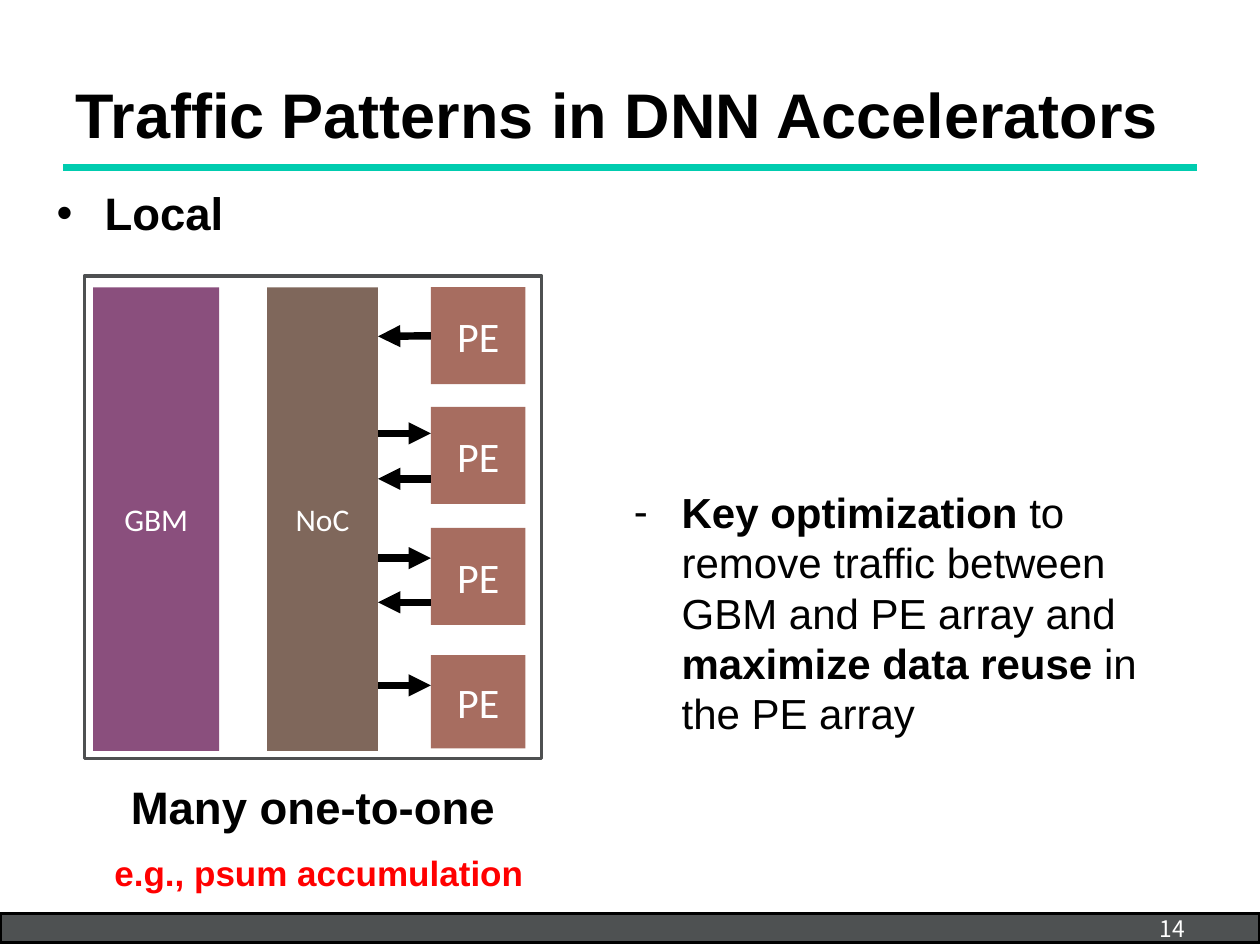
import pptx
import pptx.util
import pptx.dml.color
import pptx.enum.shapes
import pptx.enum.text
import pptx.oxml
import pptx.oxml.ns

Inches, Pt = pptx.util.Inches, pptx.util.Pt
RGBColor = pptx.dml.color.RGBColor
ALIGN = pptx.enum.text.PP_ALIGN
ANCHOR = pptx.enum.text.MSO_ANCHOR

BLACK = RGBColor(0x00, 0x00, 0x00)
WHITE = RGBColor(0xFF, 0xFF, 0xFF)
RED = RGBColor(0xFF, 0x00, 0x00)
TEAL = RGBColor(0x00, 0xCC, 0xAF)
FOOTER_GRAY = RGBColor(0x4E, 0x51, 0x52)
FRAME_GRAY = RGBColor(0x4E, 0x50, 0x51)
PURPLE = RGBColor(0x8A, 0x4F, 0x7D)
BROWN = RGBColor(0x7F, 0x67, 0x5B)
ROSE = RGBColor(0xA7, 0x6D, 0x60)


def add_xml(parent, tag, inner="", **attributes):
    """Append one DrawingML element to parent."""
    values = " ".join(f'{name}="{value}"' for name, value in attributes.items())
    namespace = pptx.oxml.ns.nsdecls("a")
    parent.append(pptx.oxml.parse_xml(f"<a:{tag} {namespace} {values}>{inner}</a:{tag}>"))


def write_text(shape, text, size=24, font="Arial", color=BLACK, bold=False,
               align=ALIGN.LEFT, anchor=ANCHOR.TOP, bullet=None, space_before=0):
    """Fill a shape with one paragraph; text is a string or (text, bold) pairs."""
    frame = shape.text_frame
    frame.word_wrap = True
    frame.auto_size = pptx.enum.text.MSO_AUTO_SIZE.NONE
    frame.vertical_anchor = anchor
    paragraph = frame.paragraphs[0]
    paragraph.alignment = align
    paragraph.space_before = Pt(space_before)
    for content, is_bold in [(text, bold)] if isinstance(text, str) else text:
        run = paragraph.add_run()
        run.text = content
        run.font.size = Pt(size)
        run.font.name = font
        run.font.bold = is_bold
        run.font.color.rgb = color
    if bullet:
        properties = paragraph._p.get_or_add_pPr()
        properties.set("marL", str(Inches(0.38)))
        properties.set("indent", str(-Inches(0.38)))
        add_xml(properties, "buClr", f'<a:srgbClr val="{BLACK}"/>')
        add_xml(properties, "buFont", typeface="Arial")
        add_xml(properties, "buChar", char=bullet)


class SlideBuilder:
    """Holds the current slide and the shared look of its elements."""
    label_font = "Calibri"
    arrow_width = 4.25

    def __init__(self, slide):
        self.slide = slide

    def placeholder(self, index, left, top, width, height, text, **style):
        shape = self.slide.placeholders[index]
        shape.left, shape.top = Inches(left), Inches(top)
        shape.width, shape.height = Inches(width), Inches(height)
        write_text(shape, text, **style)

    def text_box(self, left, top, width, height, text, **style):
        shape = self.slide.shapes.add_textbox(
            Inches(left), Inches(top), Inches(width), Inches(height))
        write_text(shape, text, **style)

    def box(self, left, top, width, height, fill=None, line=None, label="", size=18):
        shape = self.slide.shapes.add_shape(
            pptx.enum.shapes.MSO_SHAPE.RECTANGLE,
            Inches(left), Inches(top), Inches(width), Inches(height))
        shape.shadow.inherit = False
        if fill is None:
            shape.fill.background()
        else:
            shape.fill.solid()
            shape.fill.fore_color.rgb = fill
        if line is None:
            shape.line.fill.background()
        else:
            shape.line.color.rgb = line
            shape.line.width = Pt(2)
        if label:
            write_text(shape, label, size=size, font=self.label_font, color=WHITE,
                       align=ALIGN.CENTER, anchor=ANCHOR.MIDDLE)
        return shape

    def line(self, start, end, color=BLACK, width=arrow_width, arrow=False):
        connector = self.slide.shapes.add_connector(
            pptx.enum.shapes.MSO_CONNECTOR.STRAIGHT, *map(Inches, start + end))
        connector.line.color.rgb = color
        connector.line.width = Pt(width)
        if arrow:
            add_xml(connector.line._get_or_add_ln(), "tailEnd", type="triangle")
        add_xml(connector._element.spPr, "effectLst")
        return connector


def main():
    presentation = pptx.Presentation()
    presentation.slide_width, presentation.slide_height = Inches(10), Inches(7.5)
    two_content = presentation.slide_layouts[3]
    builder = SlideBuilder(presentation.slides.add_slide(two_content))

    # Footer bar, page number and title rule
    builder.box(0, 7.25, 10, 0.23, fill=FOOTER_GRAY, line=BLACK)
    builder.text_box(8.08, 7.25, 1.42, 0.23, "14", size=13, font="Noto Sans CJK KR",
                     color=WHITE, align=ALIGN.RIGHT, anchor=ANCHOR.MIDDLE)
    builder.line((0.5, 1.33), (9.5, 1.33), color=TEAL, width=4)

    # Title and lists
    builder.placeholder(0, 0.5, 0.5, 9, 0.75, "Traffic Patterns in DNN Accelerators",
                        size=36, bold=True, anchor=ANCHOR.BOTTOM)
    builder.placeholder(1, 0.35, 1.42, 9.25, 0.59, "Local", size=26, bold=True,
                        bullet="•", space_before=5.2)
    key_point = [("Key optimization ", True),
                 ("to remove traffic between GBM and PE array and ", False),
                 ("maximize data reuse", True),
                 (" in the PE array", False)]
    builder.placeholder(2, 4.93, 3.81, 4.4, 2.29, key_point, bullet="-", space_before=4.8)

    # Accelerator blocks
    builder.box(0.74, 2.28, 1, 3.68, fill=PURPLE, label="GBM")
    builder.box(2.12, 2.28, 0.88, 3.68, fill=BROWN, label="NoC")
    pe_rows = [(2.28, 0.77), (3.23, 0.77), (4.19, 0.77), (5.2, 0.74)]
    elements = [builder.box(3.42, top, 0.75, height, fill=ROSE, label="PE", size=24)
                for top, height in pe_rows]
    builder.box(0.67, 2.19, 3.63, 3.83, line=FRAME_GRAY)

    # Traffic between the NoC and the processing elements
    noc_edge, pe_edge = 3, 3.42
    to_noc = [builder.line((pe_edge, y), (noc_edge, y), arrow=True)
              for y in (2.67, 3.8, 4.78)]
    to_noc[0].begin_connect(elements[0], 1)
    for y in (3.44, 4.43, 5.44):
        builder.line((noc_edge, y), (pe_edge, y), arrow=True)

    # Captions
    builder.text_box(0.81, 6.13, 3.35, 0.59, "Many one-to-one", size=26, bold=True,
                     align=ALIGN.CENTER, space_before=5.2)
    builder.text_box(0.81, 6.71, 3.8, 0.46, "e.g., psum accumulation", size=20,
                     bold=True, color=RED, space_before=4)

    presentation.save("out.pptx")


if __name__ == "__main__":
    main()
